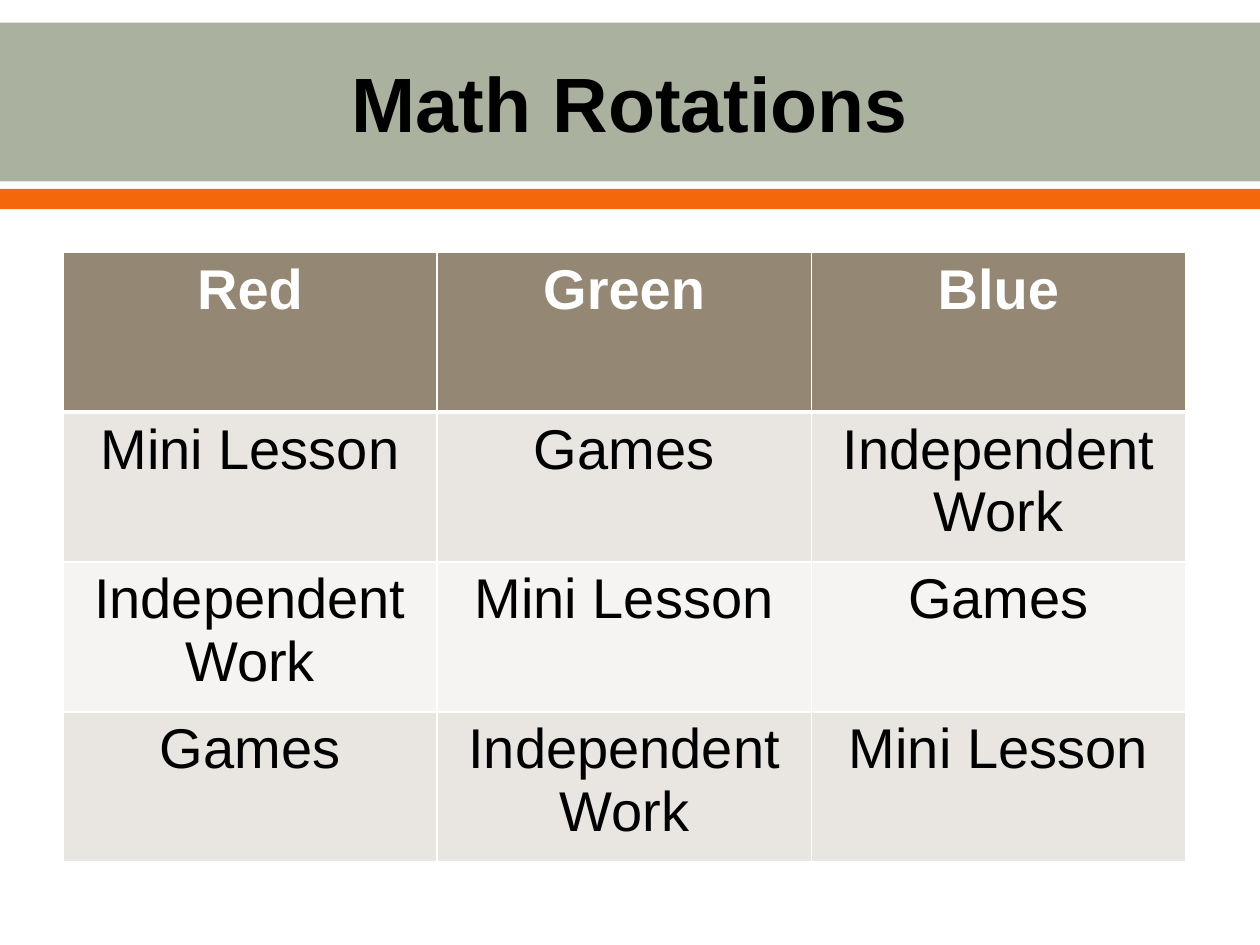
from dataclasses import dataclass

from lxml import etree
from pptx import Presentation
from pptx.dml.color import RGBColor
from pptx.enum.shapes import MSO_SHAPE
from pptx.enum.text import MSO_ANCHOR, PP_ALIGN
from pptx.oxml.ns import qn
from pptx.slide import Slide
from pptx.util import Inches, Pt

RECTANGLE = MSO_SHAPE.RECTANGLE
MIDDLE = MSO_ANCHOR.MIDDLE
TOP = MSO_ANCHOR.TOP
CENTER = PP_ALIGN.CENTER

BLACK = RGBColor(0x00, 0x00, 0x00)
WHITE = RGBColor(0xFF, 0xFF, 0xFF)
SAGE = RGBColor(0xAB, 0xB1, 0x9F)
ORANGE = RGBColor(0xF4, 0x68, 0x0B)
BROWN = RGBColor(0x94, 0x87, 0x74)
DARK_BAND = RGBColor(0xE9, 0xE6, 0xE2)
LIGHT_BAND = RGBColor(0xF5, 0xF4, 0xF2)

GROUPS = ["Red", "Green", "Blue"]
ACTIVITIES = ["Mini Lesson", "Games", "Independent Work"]


@dataclass
class SlideBuilder:
    page: Slide
    font: str = "Arial"
    title_size: int = 44
    table_size: int = 32

    def set_text(self, frame, text, size, color, bold):
        frame.text = text
        para = frame.paragraphs[0]
        para.alignment = CENTER
        para.font.name = self.font
        para.font.size = Pt(size)
        para.font.bold = bold
        para.font.color.rgb = color

    def bar(self, top, height, color):
        shape = self.page.shapes.add_shape(
            RECTANGLE, 0, Inches(top), Inches(10), Inches(height))
        shape.shadow.inherit = False
        shape.fill.solid()
        shape.fill.fore_color.rgb = color
        shape.line.fill.background()

    def title(self, text, left, top, width, height):
        box = self.page.shapes.title
        box.left, box.top = Inches(left), Inches(top)
        box.width, box.height = Inches(width), Inches(height)
        frame = box.text_frame
        frame.margin_left = frame.margin_right = Inches(0.1)
        frame.margin_top = frame.margin_bottom = Inches(0.1)
        frame.vertical_anchor = MIDDLE
        frame.word_wrap = True
        self.set_text(frame, text, self.title_size, BLACK, True)
        box.element.getparent().append(box.element)

    def borders(self, cell, widths):
        properties = cell._tc.get_or_add_tcPr()
        for side, width in widths.items():
            line = etree.SubElement(properties, qn(f"a:ln{side}"), w=str(Pt(width)))
            fill = etree.SubElement(line, qn("a:solidFill"))
            etree.SubElement(fill, qn("a:srgbClr"), val=str(WHITE))

    def table(self, rows, left, top, column_width, row_heights):
        columns = len(rows[0])
        grid = self.page.shapes.add_table(
            len(rows), columns, Inches(left), Inches(top),
            Inches(column_width * columns), Inches(sum(row_heights))).table
        for column in grid.columns:
            column.width = Inches(column_width)
        for row_index, texts in enumerate(rows):
            grid.rows[row_index].height = Inches(row_heights[row_index])
            header = row_index == 0
            band = BROWN if header else DARK_BAND if row_index % 2 else LIGHT_BAND
            widths = {"L": 1, "R": 1, "T": 3 if row_index == 1 else 1,
                      "B": 3 if header else 1}
            for column_index, text in enumerate(texts):
                cell = grid.cell(row_index, column_index)
                self.borders(cell, widths)
                cell.fill.solid()
                cell.fill.fore_color.rgb = band
                cell.margin_left = cell.margin_right = Inches(0.1)
                cell.margin_top = cell.margin_bottom = Inches(0.05)
                cell.vertical_anchor = TOP
                self.set_text(cell.text_frame, text, self.table_size,
                              WHITE if header else BLACK, header)


def main():
    deck = Presentation()
    deck.slide_width, deck.slide_height = Inches(10), Inches(7.5)
    builder = SlideBuilder(deck.slides.add_slide(deck.slide_layouts[5]))
    builder.bar(0.18, 1.26, SAGE)
    builder.bar(1.5, 0.16, ORANGE)
    builder.title("Math Rotations", 0.5, 0.2, 9, 1.22)
    rotations = [ACTIVITIES[-turn:] + ACTIVITIES[:-turn] if turn else ACTIVITIES
                 for turn in range(len(ACTIVITIES))]
    builder.table([GROUPS] + rotations, 0.5, 2, 2.97, [1.27, 1.19, 1.19, 1.19])
    deck.save("out.pptx")


if __name__ == "__main__":
    main()
